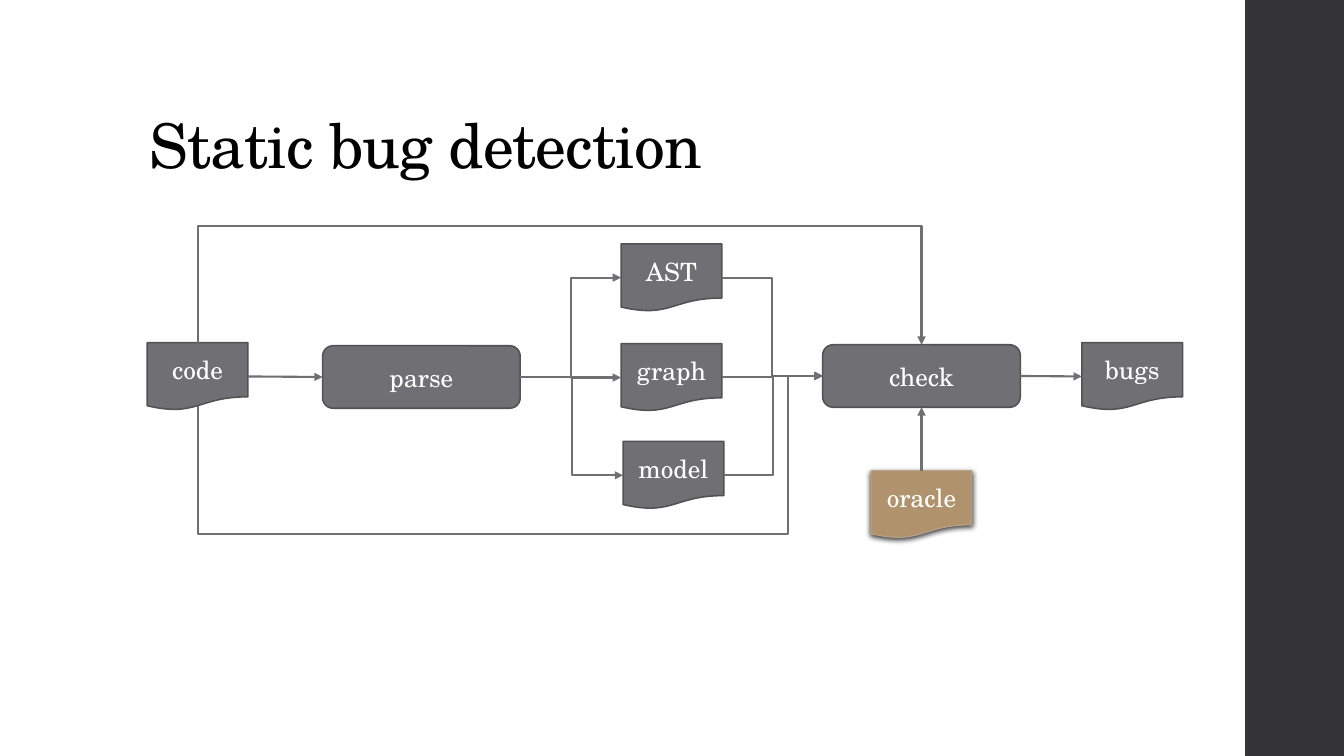
from lxml.etree import SubElement
from pptx import Presentation
from pptx.dml.color import RGBColor
from pptx.enum.shapes import MSO_CONNECTOR, MSO_SHAPE
from pptx.enum.text import MSO_ANCHOR, PP_ALIGN
from pptx.oxml.ns import qn
from pptx.util import Inches, Pt

FONT = "TeX Gyre Schola"
BLACK = RGBColor(0x00, 0x00, 0x00)
WHITE = RGBColor(0xFF, 0xFF, 0xFF)
GRAY = RGBColor(0x6F, 0x6F, 0x74)
OUTLINE = RGBColor(0x52, 0x52, 0x56)
TAN = RGBColor(0xB0, 0x92, 0x6C)
TAN_OUTLINE = RGBColor(0xB9, 0xA4, 0x89)
SIDEBAR = RGBColor(0x35, 0x35, 0x37)

DOCUMENT_SIZE = (1, 0.67)
STEP_SIZE = (1.96, 0.62)
TOP, LEFT, BOTTOM, RIGHT = range(4)  # connection sites


def write_text(frame, text, size, color, align, anchor, line_spacing=None, tracking=None):
    frame.word_wrap = True
    frame.vertical_anchor = anchor
    para = frame.paragraphs[0]
    para.alignment = align
    para.line_spacing = line_spacing
    span = para.add_run()
    span.text = text
    span.font.name = FONT
    span.font.size = Pt(size)
    span.font.color.rgb = color
    if tracking is not None:
        span.font._element.set("spc", str(round(tracking * 100)))


def add_title(page, text, left, top, width, height):
    title = page.shapes.title
    title.left, title.top = Inches(left), Inches(top)
    title.width, title.height = Inches(width), Inches(height)
    write_text(title.text_frame, text, 44, BLACK, PP_ALIGN.LEFT, MSO_ANCHOR.BOTTOM,
               line_spacing=0.9, tracking=-0.5)


def add_sidebar(page, left, width, height):
    bar = page.shapes.add_shape(MSO_SHAPE.RECTANGLE, Inches(left), 0,
                                Inches(width), Inches(height))
    bar.shadow.inherit = False
    bar.fill.solid()
    bar.fill.fore_color.rgb = SIDEBAR
    bar.line.fill.background()


def add_node(page, text, left, top, kind, size, fill=GRAY, outline=OUTLINE, weight=1.1):
    node = page.shapes.add_shape(kind, Inches(left), Inches(top),
                                 Inches(size[0]), Inches(size[1]))
    node.shadow.inherit = False
    node.fill.solid()
    node.fill.fore_color.rgb = fill
    node.line.color.rgb = outline
    node.line.width = Pt(weight)
    write_text(node.text_frame, text, 18, WHITE, PP_ALIGN.CENTER, MSO_ANCHOR.MIDDLE)
    return node


def add_document(page, text, left, top, **style):
    return add_node(page, text, left, top, MSO_SHAPE.FLOWCHART_DOCUMENT, DOCUMENT_SIZE, **style)


def add_step(page, text, left, top):
    return add_node(page, text, left, top, MSO_SHAPE.ROUNDED_RECTANGLE, STEP_SIZE)


def add_drop_shadow(node):
    effects = node._element.spPr.find(qn("a:effectLst"))
    shadow = SubElement(effects, qn("a:outerShdw"), blurRad=str(Pt(4)), dist=str(Pt(1.2)),
                        dir="5400000", algn="ctr", rotWithShape="0")
    color = SubElement(shadow, qn("a:srgbClr"), val=str(BLACK))
    SubElement(color, qn("a:alpha"), val="75000")


def format_arrow(arrow):
    arrow.line.color.rgb = GRAY
    arrow.line.width = Pt(1.5)
    SubElement(arrow.line._get_or_add_ln(), qn("a:tailEnd"), type="triangle")


def connect(page, start, start_site, end, end_site, kind=MSO_CONNECTOR.ELBOW):
    arrow = page.shapes.add_connector(kind, 0, 0, 0, 0)
    arrow.begin_connect(start, start_site)
    arrow.end_connect(end, end_site)
    format_arrow(arrow)
    SubElement(arrow._element.spPr, qn("a:effectLst"))


def add_detour(page, points):
    """Draw an arrow through the given points, in inches."""
    corners = [(Inches(x), Inches(y)) for x, y in points]
    builder = page.shapes.build_freeform(*corners[0])
    builder.add_line_segments(corners[1:], close=False)
    detour = builder.convert_to_shape()
    detour.fill.background()
    format_arrow(detour)
    detour.shadow.inherit = False


def add_flow(page, left, top):
    """Place the detection flow; left and top belong to the code document's corner."""
    code = add_document(page, "code", left, top)
    parse = add_step(page, "parse", left + 1.74, top + 0.03)
    models = [add_document(page, text, left + x, top + y) for text, x, y in
              [("AST", 4.7, -0.98), ("graph", 4.7, 0.01), ("model", 4.72, 0.98)]]
    check = add_step(page, "check", left + 6.7, top + 0.02)
    oracle = add_document(page, "oracle", left + 7.18, top + 1.27,
                          fill=TAN, outline=TAN_OUTLINE, weight=0.75)
    add_drop_shadow(oracle)
    bugs = add_document(page, "bugs", left + 9.27, top)

    for model in models:
        connect(page, parse, RIGHT, model, LEFT)
        connect(page, model, RIGHT, check, LEFT)
    for start, start_site, end, end_site in [(code, RIGHT, parse, LEFT),
                                             (oracle, TOP, check, BOTTOM),
                                             (check, RIGHT, bugs, LEFT)]:
        connect(page, start, start_site, end, end_site, MSO_CONNECTOR.STRAIGHT)

    code_x, turn_x, check_x = left + 0.5, left + 6.36, left + 7.68
    above, below, check_y = top - 1.16, top + 1.9, top + 0.33
    add_detour(page, [(code_x, top), (code_x, above), (check_x, above), (check_x, top + 0.02)])
    add_detour(page, [(code_x, top + 0.63), (code_x, below), (turn_x, below),
                      (turn_x, check_y), (left + 6.7, check_y)])


def main():
    deck = Presentation()
    deck.slide_width, deck.slide_height = Inches(13.33), Inches(7.5)
    page = deck.slides.add_slide(deck.slide_layouts[5])
    add_sidebar(page, 12.35, 0.98, 7.5)
    add_title(page, "Static bug detection", 1.38, 0.4, 10.6, 1.45)
    add_flow(page, 1.46, 3.4)
    deck.save("out.pptx")


if __name__ == "__main__":
    main()
